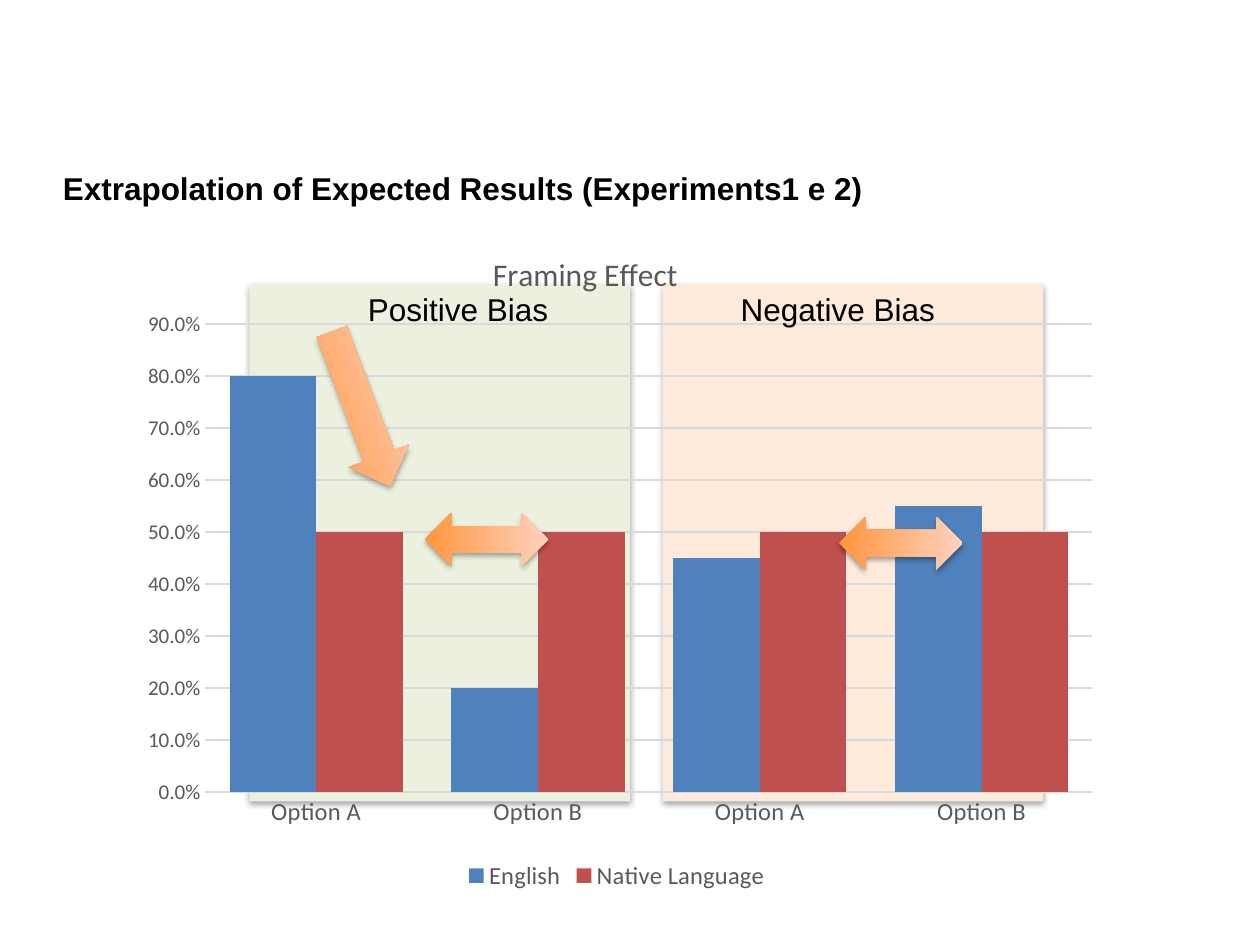
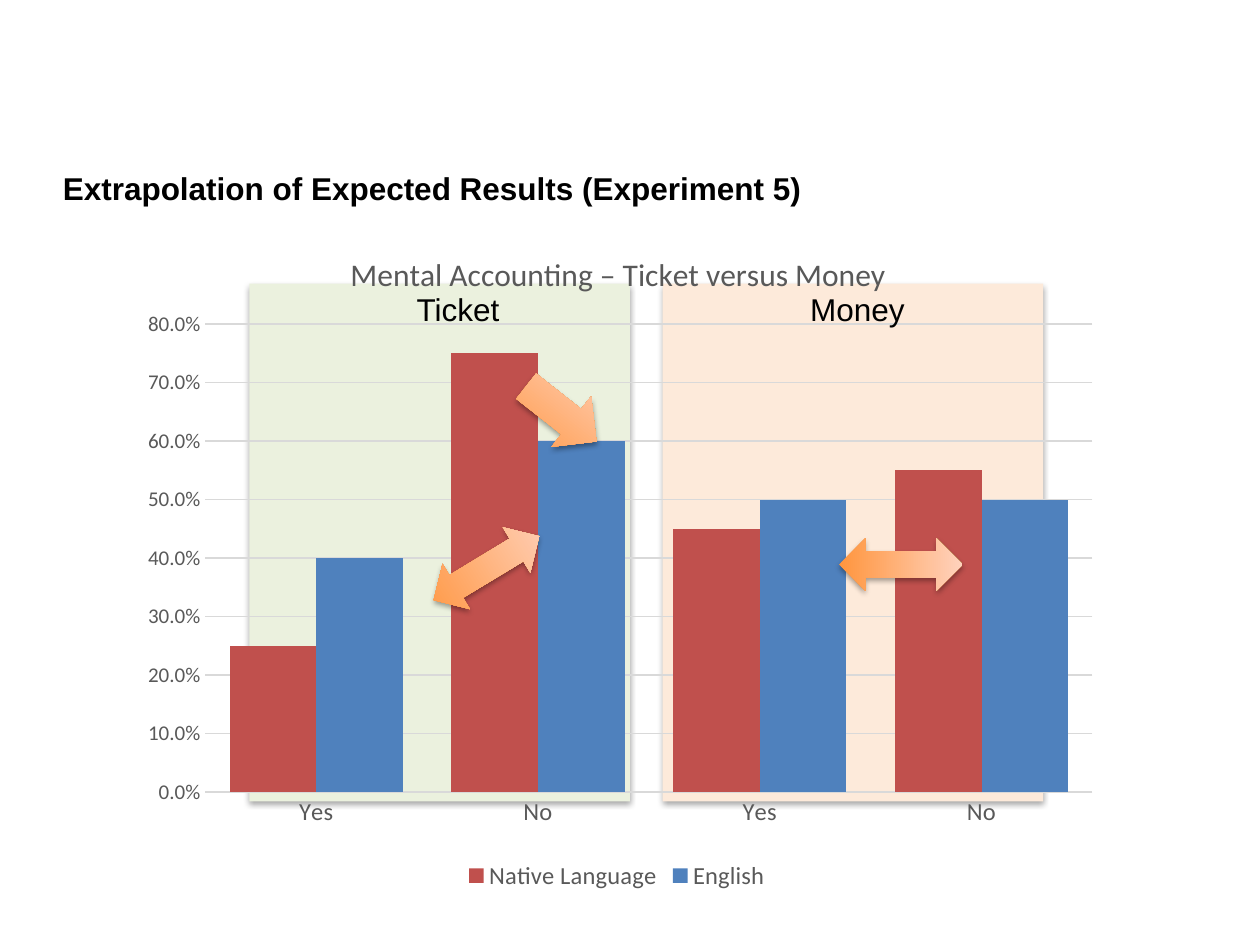
from dataclasses import dataclass
from typing import Any

from pptx import Presentation
from pptx.chart.data import CategoryChartData
from pptx.dml.color import RGBColor
from pptx.enum.chart import XL_CHART_TYPE, XL_LEGEND_POSITION, XL_TICK_MARK
from pptx.enum.shapes import MSO_SHAPE
from pptx.enum.text import MSO_AUTO_SIZE, PP_ALIGN
from pptx.oxml import parse_xml
from pptx.oxml.ns import nsdecls, qn
from pptx.util import Inches, Pt

COLUMNS = XL_CHART_TYPE.COLUMN_CLUSTERED
LEGEND_BOTTOM = XL_LEGEND_POSITION.BOTTOM
NO_TICK = XL_TICK_MARK.NONE
RECTANGLE = MSO_SHAPE.RECTANGLE
RIGHT_ARROW = MSO_SHAPE.RIGHT_ARROW
DOUBLE_ARROW = MSO_SHAPE.UP_DOWN_ARROW
GROW = MSO_AUTO_SIZE.SHAPE_TO_FIT_TEXT
LEFT, CENTER = PP_ALIGN.LEFT, PP_ALIGN.CENTER


@dataclass(frozen=True)
class Theme:
    text: str = "000000"
    chart_text: str = "595959"
    grid: str = "D9D9D9"
    arrow_stops: tuple[str, str] = ("FF953E", "FFD2BD")
    panels: tuple[str, str] = ("EBF1DE", "FDEADA")
    text_font: str = "Arial"
    chart_font: str = "Calibri"
    heading_size: int = 18
    category_size: int = 14
    value_size: int = 12


@dataclass(frozen=True)
class Box:
    left: float
    top: float
    width: float
    height: float

    def lengths(self) -> tuple[int, ...]:
        return tuple(Inches(n) for n in (self.left, self.top, self.width, self.height))


@dataclass(frozen=True)
class Label:
    text: str
    box: Box


@dataclass(frozen=True)
class Arrow:
    kind: Any
    box: Box
    rotation: float


@dataclass(frozen=True)
class ResultSlide:
    heading: str
    chart_title: str
    title_left: float
    categories: tuple[str, str]
    series: dict[str, tuple[float, ...]]
    maximum: float
    labels: tuple[Label, ...]
    arrows: tuple[Arrow, ...]


THEME = Theme()
SERIES_COLORS = {"English": "4F81BD", "Native Language": "C0504D"}
PANEL_BOXES = (Box(1.98, 2.25, 3.02, 4.11), Box(5.26, 2.25, 3.02, 4.11))
HEADING_BOX = Box(0.4, 1.29, 7.89, 0.4)
CHART_BOX = Box(0.97, 1.81, 7.85, 5.3)
PLOT_LAYOUT = {"x": 0.084, "y": 0.144, "w": 0.897, "h": 0.701}
TITLE_TOP = 0.028


def double_arrow(left: float, top: float, rotation: float = 90) -> Arrow:
    return Arrow(DOUBLE_ARROW, Box(left, top, 0.42, 0.98), rotation)


def label(text: str, left: float, width: float = 1.73) -> Label:
    return Label(text, Box(left, 2.25, width, 0.4))


SLIDES = (
    ResultSlide(
        heading="Extrapolation of Expected Results (Experiments1 e 2)",
        chart_title="Framing Effect",
        title_left=0.369,
        categories=("Option A", "Option B"),
        series={"English": (0.8, 0.2, 0.45, 0.55), "Native Language": (0.5, 0.5, 0.5, 0.5)},
        maximum=0.9,
        labels=(label("Positive Bias", 2.77), label("Negative Bias", 5.62, 2.06)),
        arrows=(
            Arrow(RIGHT_ARROW, Box(2.21, 2.99, 1.31, 0.51), 69.4),
            double_arrow(3.65, 3.79),
            double_arrow(6.94, 3.82),
        ),
    ),
    ResultSlide(
        heading="Extrapolation of Expected Results (Experiment 5)",
        chart_title="Mental Accounting – Ticket versus Money",
        title_left=0.225,
        categories=("Yes", "No"),
        series={"Native Language": (0.25, 0.75, 0.45, 0.55), "English": (0.4, 0.6, 0.5, 0.5)},
        maximum=0.8,
        labels=(label("Ticket", 2.77), label("Money", 5.94)),
        arrows=(
            Arrow(RIGHT_ARROW, Box(4.1, 3.03, 0.71, 0.51), 38.2),
            double_arrow(3.65, 4.02, 58.8),
            double_arrow(6.94, 3.99),
        ),
    ),
)


def apply_format(target: Any, values: dict[str, Any]) -> None:
    for name, value in values.items():
        setattr(target, name, value)


def format_font(font: Any, size: int, color: str, name: str, bold: bool = False) -> None:
    apply_format(font, {"size": Pt(size), "name": name, "bold": bold})
    font.color.rgb = RGBColor.from_string(color)


def add_shadowed_shape(slide: Any, kind: Any, box: Box) -> Any:
    shape = slide.shapes.add_shape(kind, *box.lengths())
    shape.line.fill.background()
    shape.shadow.inherit = False
    shape.element.spPr.find(qn("a:effectLst")).append(parse_xml(
        f'<a:outerShdw {nsdecls("a")} blurRad="40000" dist="23000" dir="5400000" '
        'rotWithShape="0"><a:srgbClr val="000000"><a:alpha val="35000"/></a:srgbClr></a:outerShdw>'
    ))
    return shape


def add_panel(slide: Any, box: Box, color: str) -> None:
    panel = add_shadowed_shape(slide, RECTANGLE, box)
    panel.fill.solid()
    panel.fill.fore_color.rgb = RGBColor.from_string(color)


def add_arrow(slide: Any, arrow: Arrow) -> None:
    shape = add_shadowed_shape(slide, arrow.kind, arrow.box)
    shape.rotation = arrow.rotation
    shape.fill.gradient()
    shape.fill.gradient_angle = 90
    for position, (stop, color) in enumerate(zip(shape.fill.gradient_stops, THEME.arrow_stops)):
        stop.position = position
        stop.color.rgb = RGBColor.from_string(color)


def add_text(slide: Any, content: Label, alignment: Any, bold: bool = False) -> None:
    frame = slide.shapes.add_textbox(*content.box.lengths()).text_frame
    apply_format(frame, {"word_wrap": True, "auto_size": GROW, "text": content.text})
    paragraph = frame.paragraphs[0]
    paragraph.alignment = alignment
    format_font(paragraph.runs[0].font, THEME.heading_size, THEME.text, THEME.text_font, bold)


def set_layout(parent: Any, index: int, position: dict[str, float], target: str = "") -> None:
    for layout in parent.findall(qn("c:layout")):
        parent.remove(layout)
    modes = "".join(f'<c:{key}Mode val="edge"/>' for key in "xy")
    values = "".join(f'<c:{key} val="{value}"/>' for key, value in position.items())
    parent.insert(index, parse_xml(
        f'<c:layout {nsdecls("c")}><c:manualLayout>{target}{modes}{values}'
        "</c:manualLayout></c:layout>"
    ))


def clear_background() -> Any:
    return parse_xml(
        f'<c:spPr {nsdecls("c", "a")}><a:noFill/><a:ln><a:noFill/></a:ln></c:spPr>'
    )


def format_axes(chart: Any, maximum: float) -> None:
    sizes = ((chart.category_axis, THEME.category_size), (chart.value_axis, THEME.value_size))
    for axis, size in sizes:
        apply_format(axis, {"major_tick_mark": NO_TICK, "minor_tick_mark": NO_TICK})
        axis.format.line.fill.background()
        format_font(axis.tick_labels.font, size, THEME.chart_text, THEME.chart_font)
    value_axis = chart.value_axis
    apply_format(value_axis, {"minimum_scale": 0, "maximum_scale": maximum,
                              "major_unit": 0.1, "has_major_gridlines": True})
    apply_format(value_axis.tick_labels, {"number_format": "0.0%",
                                          "number_format_is_linked": False})
    grid_line = value_axis.major_gridlines.format.line
    grid_line.width = Pt(0.75)
    grid_line.color.rgb = RGBColor.from_string(THEME.grid)


def add_result_chart(slide: Any, result: ResultSlide) -> None:
    data = CategoryChartData(number_format="0.0%")
    data.categories = result.categories * 2
    for name, values in result.series.items():
        data.add_series(name, values)
    chart = slide.shapes.add_chart(COLUMNS, *CHART_BOX.lengths(), data).chart
    format_font(chart.font, 10, THEME.text, THEME.chart_font)
    apply_format(chart, {"has_title": True, "has_legend": True})

    title = chart.chart_title
    title.text_frame.text = result.chart_title
    format_font(title.text_frame.paragraphs[0].runs[0].font, THEME.heading_size,
                THEME.chart_text, THEME.chart_font)
    set_layout(title.element if hasattr(title, "element") else chart.element.find(
        f'{qn("c:chart")}/{qn("c:title")}'), 1, {"x": result.title_left, "y": TITLE_TOP})

    apply_format(chart.legend, {"position": LEGEND_BOTTOM, "include_in_layout": False})
    format_font(chart.legend.font, THEME.category_size, THEME.chart_text, THEME.chart_font)
    format_axes(chart, result.maximum)

    plot = chart.plots[0]
    apply_format(plot, {"gap_width": 56, "overlap": 0, "vary_by_categories": False})
    for series in plot.series:
        series.format.fill.solid()
        series.format.fill.fore_color.rgb = RGBColor.from_string(SERIES_COLORS[series.name])

    chart_element = chart.element.find(qn("c:chart"))
    plot_area = chart_element.find(qn("c:plotArea"))
    set_layout(plot_area, 0, PLOT_LAYOUT, '<c:layoutTarget val="inner"/>')
    plot_area.append(clear_background())
    chart_element.addnext(clear_background())


def add_result_slide(presentation: Any, result: ResultSlide) -> None:
    slide = presentation.slides.add_slide(presentation.slide_layouts[6])
    for box, color in zip(PANEL_BOXES, THEME.panels):
        add_panel(slide, box, color)
    add_text(slide, Label(result.heading, HEADING_BOX), LEFT, bold=True)
    add_result_chart(slide, result)
    for content in result.labels:
        add_text(slide, content, CENTER)
    for arrow in result.arrows:
        add_arrow(slide, arrow)


def main() -> None:
    presentation = Presentation()
    apply_format(presentation, {"slide_width": Inches(10), "slide_height": Inches(7.5)})
    for result in SLIDES:
        add_result_slide(presentation, result)
    presentation.save("out.pptx")


if __name__ == "__main__":
    main()
